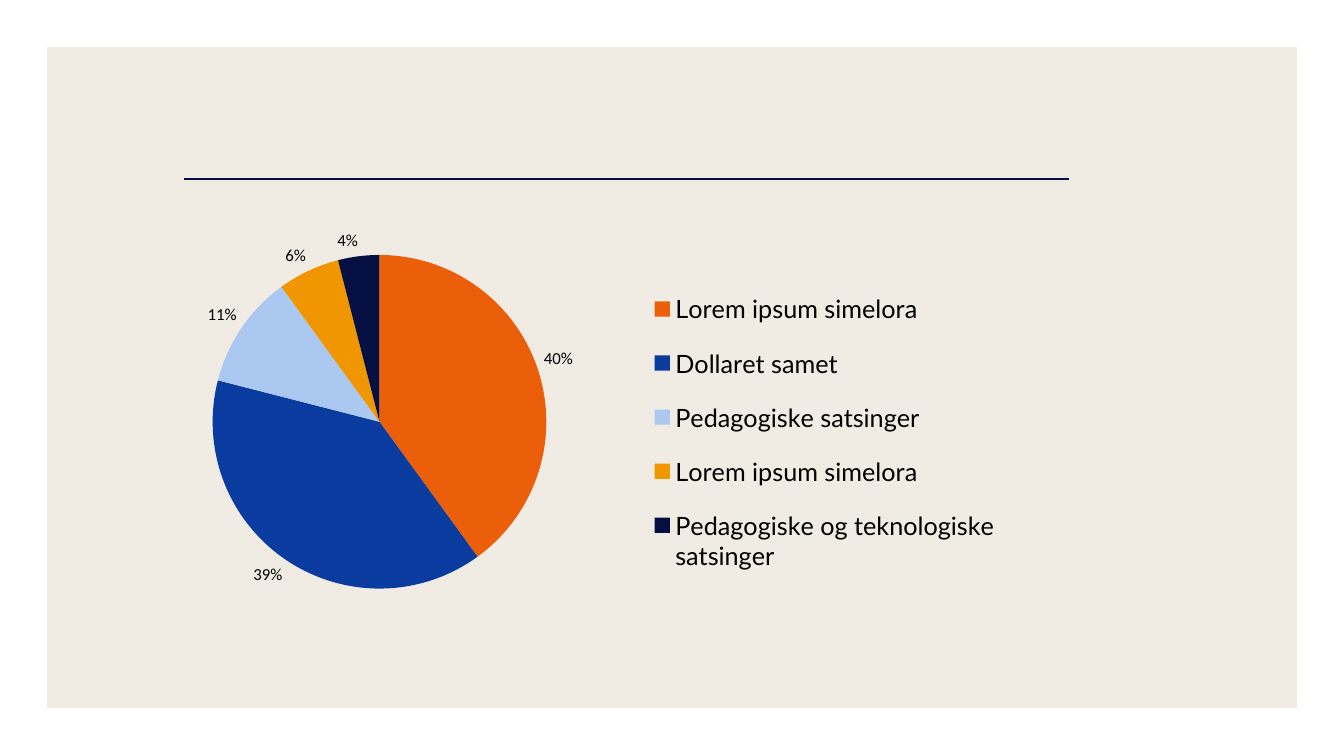
"""Build a slide with a framed background, a rule and a pie chart with a legend."""
from dataclasses import dataclass

import lxml.etree
import pptx
import pptx.chart.chart
import pptx.chart.data
import pptx.dml.color
import pptx.enum.chart
import pptx.enum.shapes
import pptx.oxml
import pptx.oxml.ns
import pptx.slide
import pptx.util

Inches = pptx.util.Inches
Pt = pptx.util.Pt
RGBColor = pptx.dml.color.RGBColor
qn = pptx.oxml.ns.qn


@dataclass(frozen=True)
class Theme:
    background: str = "F0ECE3"
    frame: str = "FFFFFF"
    navy: str = "050F41"
    text: str = "000000"
    body_font: str = "Calibri"
    legend_font: str = "Lato"
    chart_size: int = 10
    label_size: int = 12
    legend_size: int = 18
    frame_width: int = 34
    rule_width: float = 1.5


@dataclass(frozen=True)
class Box:
    left: float
    top: float
    width: float
    height: float


@dataclass(frozen=True)
class Slice:
    name: str
    share: float
    color: str


THEME = Theme()
FRAME = Box(0.23, 0.23, 12.87, 7.03)
CHART = Box(1.83, 2.12, 8.78, 4.32)
PIE_IN_CHART = Box(0.28, 0.41, 3.31, 3.31)
LEGEND_IN_CHART = Box(4.33, 0.56, 4.04, 3.22)
RULE_TOP = 1.78
SLICES = [
    Slice("Lorem ipsum simelora", 0.4, "EB5F0A"),
    Slice("Dollaret samet", 0.39, "0A3CA0"),
    Slice("Pedagogiske satsinger", 0.11, "AAC8F0"),
    Slice("Lorem ipsum simelora", 0.06, "F09600"),
    Slice("Pedagogiske og teknologiske satsinger", 0.04, THEME.navy),
]


def lengths(box: Box) -> list:
    return [Inches(value) for value in (box.left, box.top, box.width, box.height)]


def style_font(font, name: str, size: float, color: str) -> None:
    font.name = name
    font.size = Pt(size)
    font.color.rgb = RGBColor.from_string(color)


def style_line(line, color: str, width: float) -> None:
    line.color.rgb = RGBColor.from_string(color)
    line.width = Pt(width)


def set_layout(parent, position: int, box: Box, inner: bool = False) -> None:
    for existing in parent.findall(qn("c:layout")):
        parent.remove(existing)
    layout = pptx.oxml.parse_xml(
        f'<c:layout {pptx.oxml.ns.nsdecls("c")}><c:manualLayout/></c:layout>'
    )
    settings = [("layoutTarget", "inner")] if inner else []
    settings += [
        ("xMode", "edge"),
        ("yMode", "edge"),
        ("x", box.left / CHART.width),
        ("y", box.top / CHART.height),
        ("w", box.width / CHART.width),
        ("h", box.height / CHART.height),
    ]
    for tag, value in settings:
        lxml.etree.SubElement(layout[0], qn(f"c:{tag}")).set("val", str(value))
    parent.insert(position, layout)


def add_frame(slide: pptx.slide.Slide) -> None:
    frame = slide.shapes.add_shape(
        pptx.enum.shapes.MSO_SHAPE.RECTANGLE, *lengths(FRAME)
    )
    frame.shadow.inherit = False
    frame.fill.background()
    style_line(frame.line, THEME.frame, THEME.frame_width)
    outline = frame._element.spPr.find(qn("a:ln"))
    lxml.etree.SubElement(outline, qn("a:miter")).set("lim", "800000")


def add_rule(slide: pptx.slide.Slide) -> None:
    rule = slide.shapes.add_connector(
        pptx.enum.shapes.MSO_CONNECTOR.STRAIGHT,
        Inches(CHART.left + CHART.width), Inches(RULE_TOP),
        Inches(CHART.left), Inches(RULE_TOP),
    )
    style_line(rule.line, THEME.navy, THEME.rule_width)
    lxml.etree.SubElement(rule._element.spPr, qn("a:effectLst"))


def style_slices(chart: pptx.chart.chart.Chart) -> None:
    plot = chart.plots[0]
    plot.vary_by_categories = True
    for index, item in enumerate(SLICES):
        fill = plot.series[0].points[index].format.fill
        fill.solid()
        fill.fore_color.rgb = RGBColor.from_string(item.color)
    labels = plot.series[0].data_labels
    labels.show_value = True
    labels.show_percentage = False
    labels.number_format = "0%"
    labels.number_format_is_linked = False
    labels.position = pptx.enum.chart.XL_LABEL_POSITION.OUTSIDE_END
    style_font(labels.font, THEME.body_font, THEME.label_size, THEME.text)


def style_legend(chart: pptx.chart.chart.Chart) -> None:
    chart.has_legend = True
    legend = chart.legend
    legend.position = pptx.enum.chart.XL_LEGEND_POSITION.RIGHT
    legend.include_in_layout = False
    style_font(legend.font, THEME.legend_font, THEME.legend_size, THEME.text)
    set_layout(legend._element, 1, LEGEND_IN_CHART)


def add_pie(slide: pptx.slide.Slide) -> None:
    data = pptx.chart.data.CategoryChartData(number_format="0%")
    data.categories = [item.name for item in SLICES]
    data.add_series("Series 1", [item.share for item in SLICES])
    chart = slide.shapes.add_chart(
        pptx.enum.chart.XL_CHART_TYPE.PIE, *lengths(CHART), data
    ).chart
    chart.has_title = False
    style_font(chart.font, THEME.body_font, THEME.chart_size, THEME.navy)
    style_slices(chart)
    style_legend(chart)
    set_layout(chart._chartSpace.chart.plotArea, 0, PIE_IN_CHART, inner=True)


def main() -> None:
    presentation = pptx.Presentation()
    presentation.slide_width = Inches(40 / 3)
    presentation.slide_height = Inches(7.5)
    slide = presentation.slides.add_slide(presentation.slide_layouts[6])
    slide.background.fill.solid()
    slide.background.fill.fore_color.rgb = RGBColor.from_string(THEME.background)
    add_frame(slide)
    add_rule(slide)
    add_pie(slide)
    presentation.save("out.pptx")


if __name__ == "__main__":
    main()
